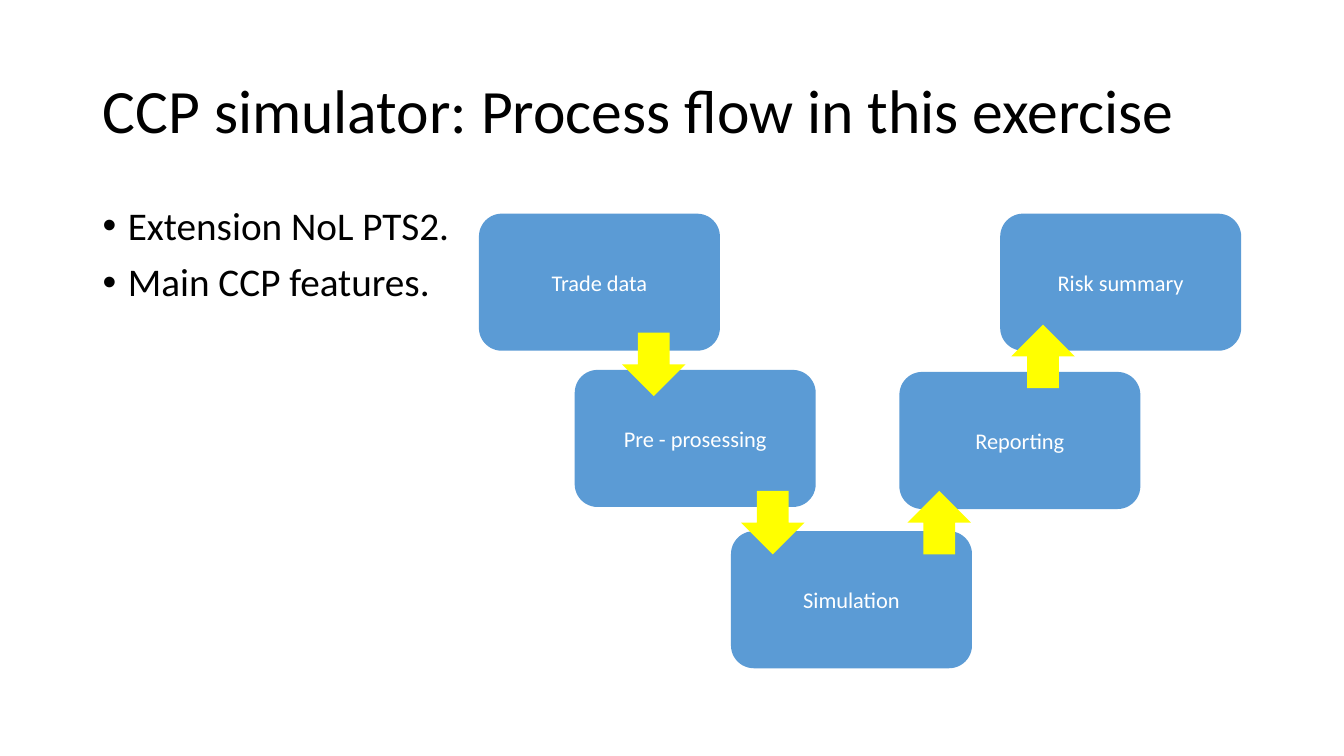
from lxml import etree
from pptx import Presentation
from pptx.dml.color import RGBColor
from pptx.enum.shapes import MSO_SHAPE
from pptx.enum.text import MSO_ANCHOR, PP_ALIGN
from pptx.oxml.ns import qn
from pptx.util import Inches, Pt

BLUE, YELLOW, BLACK, WHITE = "5B9BD5", "FFFF00", "000000", "FFFFFF"
BOX_WIDTH, BOX_HEIGHT, ARROW_SIZE = 2.39, 1.36, 0.63


def style_text(paragraph, size, color):
    font = paragraph.runs[0].font
    font.name = "Calibri"
    font.size = Pt(size)
    font.color.rgb = RGBColor.from_string(color)


def add_filled_shape(kind, left, top, width, height, color):
    shape = slide.shapes.add_shape(
        kind, Inches(left), Inches(top), Inches(width), Inches(height))
    shape.shadow.inherit = False
    shape.fill.solid()
    shape.fill.fore_color.rgb = RGBColor.from_string(color)
    shape.line.fill.background()
    return shape


presentation = Presentation()
presentation.slide_width = Inches(13.33)
presentation.slide_height = Inches(7.5)
slide = presentation.slides.add_slide(presentation.slide_layouts[6])

# Title
title = slide.shapes.add_textbox(Inches(0.92), Inches(0.4), Inches(11.5), Inches(1.45))
title.text_frame.word_wrap = True
title.text_frame.vertical_anchor = MSO_ANCHOR.MIDDLE
title.text_frame.text = "CCP simulator: Process flow in this exercise"
title.text_frame.paragraphs[0].line_spacing = 0.9
style_text(title.text_frame.paragraphs[0], 44, BLACK)

# Bullet list
bullets = slide.shapes.add_textbox(Inches(0.92), Inches(2), Inches(11.5), Inches(4.76))
bullets.text_frame.word_wrap = True
bullets.text_frame.text = "Extension NoL PTS2.\nMain CCP features."
for paragraph in bullets.text_frame.paragraphs:
    paragraph.line_spacing = 0.9
    paragraph.space_before = Pt(10)
    style_text(paragraph, 28, BLACK)
    properties = paragraph._p.get_or_add_pPr()
    properties.set("marL", str(Inches(0.25)))
    properties.set("indent", str(Inches(-0.25)))
    etree.SubElement(properties, qn("a:buFont")).set("typeface", "Arial")
    etree.SubElement(properties, qn("a:buChar")).set("char", "•")

# Process steps
steps = [
    ("Simulation", 7.25, 5.27),
    ("Pre - prosessing", 5.7, 3.67),
    ("Trade data", 4.75, 2.12),
    ("Reporting", 8.92, 3.69),
    ("Risk summary", 9.92, 2.12),
]
for label, left, top in steps:
    box = add_filled_shape(
        MSO_SHAPE.ROUNDED_RECTANGLE, left, top, BOX_WIDTH, BOX_HEIGHT, BLUE)
    box.text_frame.text = label
    box.text_frame.vertical_anchor = MSO_ANCHOR.MIDDLE
    box.text_frame.paragraphs[0].alignment = PP_ALIGN.CENTER
    style_text(box.text_frame.paragraphs[0], 16, WHITE)

# Arrows: down into the simulation, then up to the summary
arrows = [(6.17, 3.3, 0), (7.35, 4.87, 0), (9, 4.87, 180), (10.03, 3.22, 180)]
for left, top, rotation in arrows:
    arrow = add_filled_shape(
        MSO_SHAPE.DOWN_ARROW, left, top, ARROW_SIZE, ARROW_SIZE, YELLOW)
    arrow.rotation = rotation

presentation.save("out.pptx")
